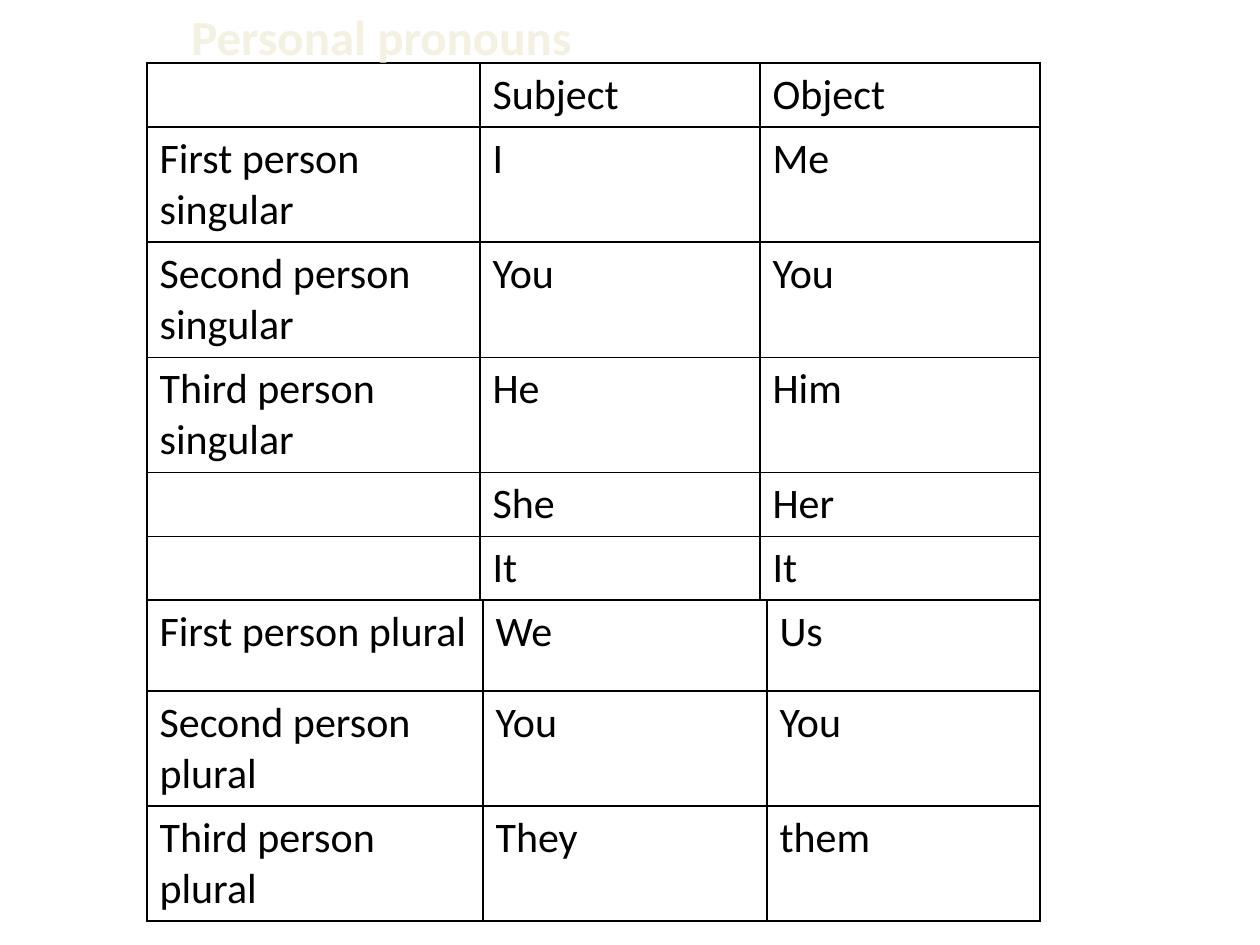
from lxml.etree import SubElement
from pptx import Presentation
from pptx.dml.color import RGBColor
from pptx.oxml.ns import qn
from pptx.util import Emu, Pt

COLORS = {"ink": "000000", "title": "F4F1E3"}
FONT = "Calibri"
PX_PER_INCH = 126
LINE_HEIGHT, WRAPPED_HEIGHT = 64, 115

SINGULAR = [
    ["", "Subject", "Object"],
    ["First person singular", "I", "Me"],
    ["Second person singular", "You", "You"],
    ["Third person singular", "He", "Him"],
    ["", "She", "Her"],
    ["", "It", "It"],
]
PLURAL = [
    ["First person plural", "We", "Us"],
    ["Second person plural", "You", "You"],
    ["Third person plural", "They", "them"],
]


def px(length):
    return Emu(round(length * 914400 / PX_PER_INCH))


class Deck:
    def __init__(self, width, height):
        self.prs = Presentation()
        self.prs.slide_width, self.prs.slide_height = px(width), px(height)
        self.slide = self.prs.slides.add_slide(self.prs.slide_layouts[6])

    def style(self, font, size, color, bold=False):
        font.name, font.size, font.bold = FONT, Pt(size), bold
        font.color.rgb = RGBColor.from_string(COLORS[color])

    def border(self, cell):
        props = cell._tc.get_or_add_tcPr()
        for position, side in enumerate(("lnL", "lnR", "lnT", "lnB")):
            line = SubElement(props, qn(f"a:{side}"), w=str(Pt(1)))
            fill = SubElement(line, qn("a:solidFill"))
            SubElement(fill, qn("a:srgbClr"), val=COLORS["ink"])
            props.insert(position, line)

    def table(self, left, top, widths, heights, rows):
        grid = self.slide.shapes.add_table(
            len(rows), len(widths), px(left), px(top),
            px(sum(widths)), px(sum(heights))).table
        grid.first_row = grid.horz_banding = False
        for column, width in zip(grid.columns, widths):
            column.width = px(width)
        for row, height, words in zip(grid.rows, heights, rows):
            row.height = px(height)
            for cell, word in zip(row.cells, words):
                cell.fill.background()
                self.border(cell)
                paragraph = cell.text_frame.paragraphs[0]
                paragraph.text = word
                for run in paragraph.runs:
                    self.style(run.font, 24, "ink")

    def text(self, left, top, width, height, words, size, color):
        frame = self.slide.shapes.add_textbox(
            px(left), px(top), px(width), px(height)).text_frame
        frame.word_wrap = True
        frame.text = words
        self.style(frame.paragraphs[0].runs[0].font, size, color, bold=True)

    def save(self):
        self.prs.save("out.pptx")


def main():
    deck = Deck(1260, 945)
    singular_heights = [WRAPPED_HEIGHT if "person" in row[0] else LINE_HEIGHT
                        for row in SINGULAR]
    plural_heights = [91, WRAPPED_HEIGHT, WRAPPED_HEIGHT]
    left, top = 147, 63
    deck.table(left, top, [333, 280, 280], singular_heights, SINGULAR)
    deck.table(left, top + sum(singular_heights), [336, 284, 273],
               plural_heights, PLURAL)
    deck.text(179, 0, 441, 72, "Personal pronouns", 28, "title")
    deck.save()


if __name__ == "__main__":
    main()
